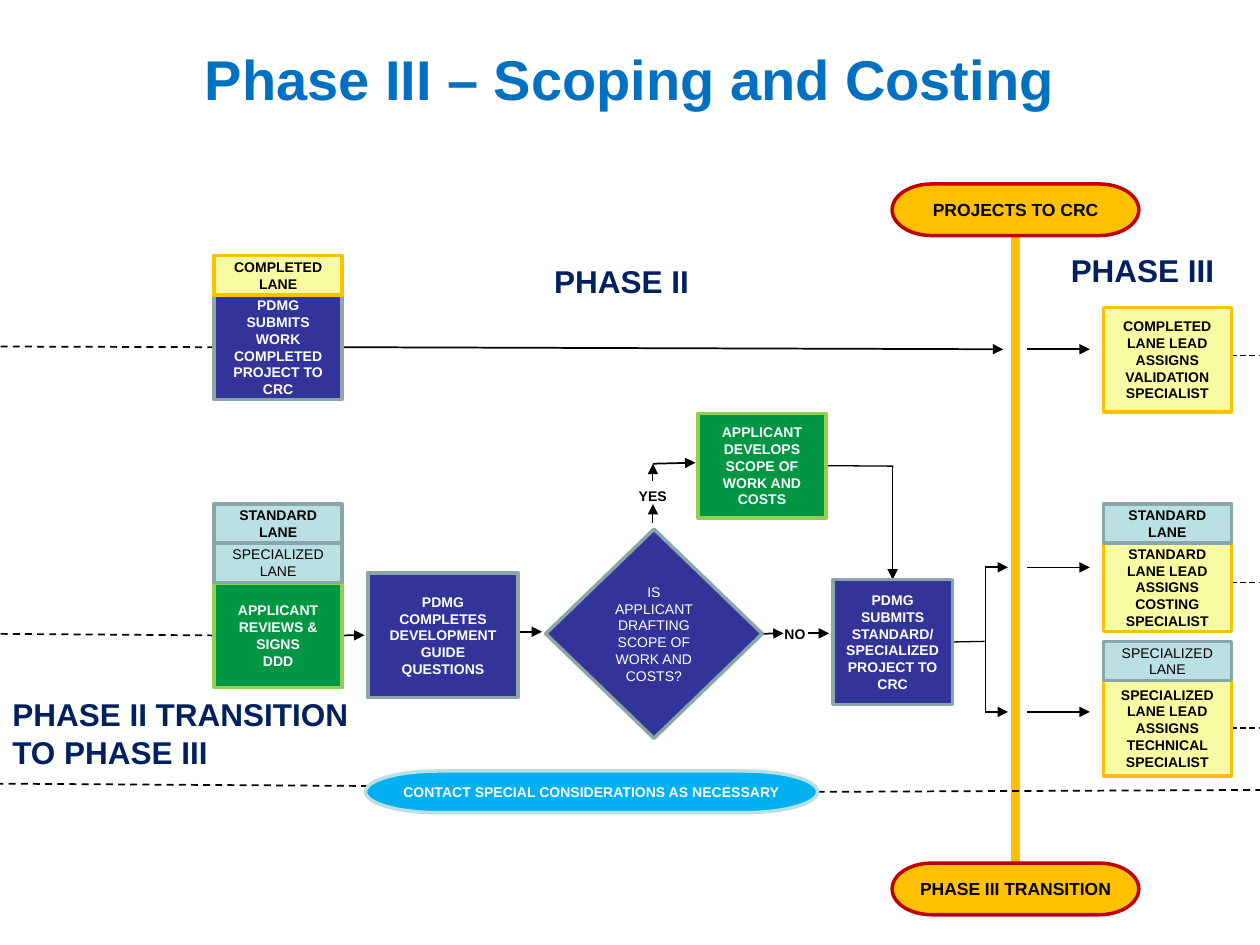
"""Builds the Phase III scoping and costing flowchart slide."""
from lxml import etree
from pptx import Presentation
from pptx.dml.color import RGBColor
from pptx.enum.dml import MSO_LINE
from pptx.enum.shapes import MSO_CONNECTOR, MSO_SHAPE
from pptx.enum.text import MSO_ANCHOR, PP_ALIGN
from pptx.oxml.ns import qn
from pptx.util import Pt

RECT, DIAMOND, PILL = MSO_SHAPE.RECTANGLE, MSO_SHAPE.DIAMOND, MSO_SHAPE.FLOWCHART_TERMINATOR
STRAIGHT, DASH = MSO_CONNECTOR.STRAIGHT, MSO_LINE.DASH
LEFT, CENTER = PP_ALIGN.LEFT, PP_ALIGN.CENTER
TOP, MIDDLE = MSO_ANCHOR.TOP, MSO_ANCHOR.MIDDLE
BLACK, WHITE, NAVY = "000000", "FFFFFF", "002060"


def rgb(code):
    return RGBColor.from_string(code)


def write(frame, text, size=8, color=BLACK, bold=True, align=CENTER, anchor=MIDDLE, inset=7):
    frame.word_wrap = True
    frame.vertical_anchor = anchor
    frame.margin_left = frame.margin_right = Pt(inset)
    for index, line in enumerate(text.split("\n")):
        paragraph = frame.add_paragraph() if index else frame.paragraphs[0]
        paragraph.alignment = align
        run = paragraph.add_run()
        run.text = line
        run.font.name = "Arial"
        run.font.size = Pt(size)
        run.font.bold = bold
        run.font.color.rgb = rgb(color)


prs = Presentation()
prs.slide_width, prs.slide_height = Pt(720), Pt(540)
slide = prs.slides.add_slide(prs.slide_layouts[6])

labels = [
    ("Phase III – Scoping and Costing", 36, 21.6, 648, 90, 32, "0070C0", CENTER),
    ("PHASE II TRANSITION TO PHASE III", 0, 393.8, 208, 51, 18, NAVY, LEFT),
    ("PHASE II", 309.6, 146.2, 105, 29, 18, NAVY, LEFT),
    ("PHASE III", 604.8, 139.7, 105, 29, 18, NAVY, LEFT),
    ("YES", 352.8, 275, 40.4, 17, 8, BLACK, CENTER),
    ("NO", 439.2, 354.2, 30.2, 17, 8, BLACK, CENTER),
]
for text, x, y, width, height, size, color, align in labels:
    label = slide.shapes.add_textbox(Pt(x), Pt(y), Pt(width), Pt(height))
    write(label.text_frame, text, size=size, color=color, align=align, anchor=TOP, inset=7.2)

links = [
    (580.3, 134.6, 580.3, 493.2, 5, "", ("to_crc", 2), ("transition", 0)),
    (122.4, 198.3, -2, 198, 1, "dash", ("completed", 1), None),
    (122.4, 363, -2, 362.2, 1, "dash", ("reviews", 1), None),
    (195.4, 198.3, 573.3, 199.6, 1, "arrow", ("completed", 3), None),
    (195.4, 363, 208.3, 363, 1, "arrow", ("reviews", 3), None),
    (586.8, 199.6, 622.8, 199.6, 1, "arrow", None, None),
    (586.8, 324.2, 622.8, 324.2, 0.75, "arrow", None, None),
    (586.8, 406.8, 622.8, 406.8, 0.75, "arrow", None, None),
    (703.7, 203.2, 720, 203.2, 0.75, "dash", None, None),
    (703.7, 333, 720, 333, 0.75, "dash", None, None),
    (703.7, 416, 720, 416, 0.75, "dash", ("technical", 3), None),
    (-2, 447.8, 347.8, 450, 1, "dash", None, None),
    (467.3, 452.5, 720, 451.4, 1, "dash", ("contact", 3), None),
    (296.6, 361, 309.8, 361, 1, "arrow", None, None),
    (373.1, 275, 373.1, 265, 0.5, "arrow", None, None),
    (373.1, 298.8, 373.1, 288, 0.5, "arrow", None, None),
    (373.1, 265, 397.4, 264.4, 1, "arrow", None, None),
    (461.5, 361.9, 473.8, 361.9, 1, "arrow", None, None),
    (435.6, 362.2, 447.8, 361.9, 1, "arrow", ("drafting", 3), None),
    (544.3, 366.8, 562.6, 366.5, 0.75, "", ("submits", 3), None),
    (563, 324.2, 563, 406.8, 0.75, "", None, None),
    (563, 324.2, 576, 324.2, 1, "arrow", None, None),
    (563, 406.8, 576, 406.8, 1, "arrow", None, None),
    (472.3, 266, 510.5, 266.4, 0.75, "", ("develops", 3), None),
    (510.1, 267.1, 510.1, 331.2, 0.75, "arrow", None, ("submits", 0)),
]
joins = []
for x1, y1, x2, y2, width, style, start, end in links:
    link = slide.shapes.add_connector(STRAIGHT, Pt(x1), Pt(y1), Pt(x2), Pt(y2))
    link.line.width = Pt(width)
    link.line.color.rgb = rgb("FFC000" if width == 5 else BLACK)
    if style == "dash":
        link.line.dash_style = DASH
    if style == "arrow":
        etree.SubElement(link.line._get_or_add_ln(), qn("a:tailEnd"), type="triangle")
    etree.SubElement(link._element.spPr, qn("a:effectLst"))
    joins += [(connect, site) for connect, site in
              ((link.begin_connect, start), (link.end_connect, end)) if site]

styles = {
    "pdmg": ("333399", "8AA6A8", WHITE),
    "applicant": ("009644", "92D050", WHITE),
    "lane": ("BBE0E3", "8AA6A8", BLACK),
    "lead": ("F9FBA3", "FFC000", BLACK),
    "gate": ("FFC000", "C00000", BLACK),
    "contact": ("00B0F0", "BBE0E3", WHITE),
}
left, right, step_width, step_height, tag_height = 122.4, 630.5, 73.2, 59.8, 22.4
steps = [
    ("completed", "PDMG SUBMITS WORK COMPLETED PROJECT TO CRC", "pdmg", RECT,
     left, 168.5, step_width, step_height),
    ("reviews", "APPLICANT REVIEWS & SIGNS\nDDD", "applicant", RECT,
     left, 333.2, step_width, step_height),
    ("left_specialized", "SPECIALIZED\nLANE", "lane", RECT, left, 310.4, step_width, tag_height),
    ("left_standard", "STANDARD\nLANE", "lane", RECT, left, 288, step_width, tag_height),
    ("left_completed", "COMPLETED\nLANE", "lead", RECT, left, 146.1, step_width, tag_height),
    ("validation", "COMPLETED LANE LEAD ASSIGNS VALIDATION SPECIALIST", "lead", RECT,
     right, 175.7, step_width, step_height),
    ("technical", "SPECIALIZED LANE LEAD ASSIGNS TECHNICAL SPECIALIST", "lead", RECT,
     right, 388.4, step_width, 55.2),
    ("costing", "STANDARD LANE LEAD ASSIGNS COSTING SPECIALIST", "lead", RECT,
     right, 310.4, step_width, 50.4),
    ("right_standard", "STANDARD\nLANE", "lane", RECT, right, 288, step_width, tag_height),
    ("right_specialized", "SPECIALIZED\nLANE", "lane", RECT, right, 366.5, step_width, tag_height),
    ("guide", "PDMG COMPLETES DEVELOPMENT GUIDE QUESTIONS", "pdmg", RECT, 210.2, 327.4, 86, 71.2),
    ("drafting", "IS APPLICANT DRAFTING SCOPE OF WORK AND COSTS?", "pdmg", DIAMOND,
     311.8, 302.4, 123.8, 119.5),
    ("develops", "APPLICANT DEVELOPS SCOPE OF WORK AND COSTS", "applicant", RECT,
     398.9, 236.2, step_width, step_height),
    ("submits", "PDMG SUBMITS STANDARD/ SPECIALIZED PROJECT TO CRC", "pdmg", RECT,
     475.9, 331.2, 68.4, 71.3),
    ("contact", "CONTACT SPECIAL CONSIDERATIONS AS NECESSARY", "contact", PILL,
     208.8, 440.6, 258.5, 23.8),
    ("transition", "PHASE III TRANSITION", "gate", PILL, 509.8, 493.2, 141, 29.5),
    ("to_crc", "PROJECTS TO CRC", "gate", PILL, 509.8, 105.1, 141, 29.5),
]
light_steps = {"left_specialized", "right_specialized", "drafting"}
placed = {}
for name, text, style, outline, x, y, width, height in steps:
    fill, border, ink = styles[style]
    step = slide.shapes.add_shape(outline, Pt(x), Pt(y), Pt(width), Pt(height))
    step.shadow.inherit = False
    step.fill.solid()
    step.fill.fore_color.rgb = rgb(fill)
    step.line.color.rgb = rgb(border)
    step.line.width = Pt(2)
    write(step.text_frame, text, size=10 if style == "gate" else 8, color=ink,
          bold=name not in light_steps)
    placed[name] = step

for connect, (name, side) in joins:
    connect(placed[name], side)

prs.save("out.pptx")
